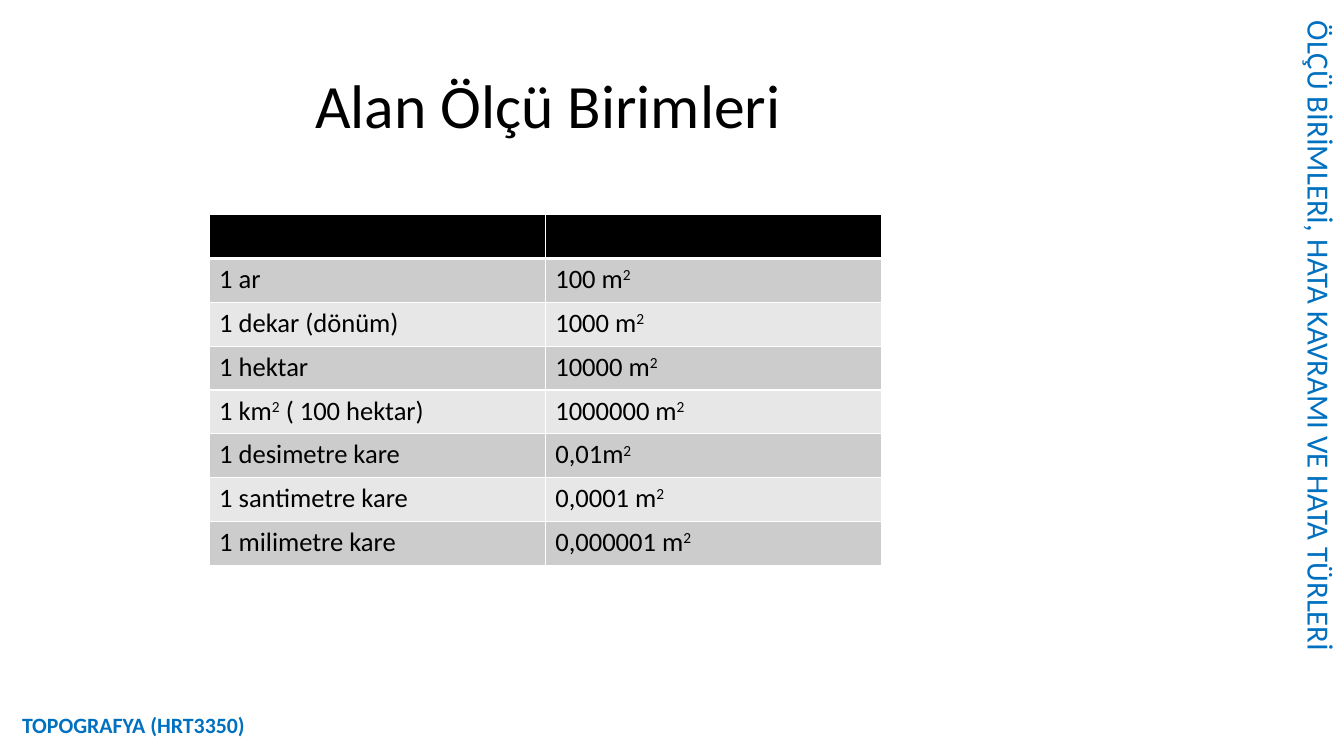
from typing import NamedTuple

from lxml import etree
from pptx import Presentation
from pptx import util as u
from pptx.dml.color import RGBColor
from pptx.enum import text
from pptx.oxml import ns

PX = u.Inches(1) // 200
FONT = "Calibri"
BLACK = RGBColor(0x00, 0x00, 0x00)
WHITE = RGBColor(0xFF, 0xFF, 0xFF)
BLUE = RGBColor(0x00, 0x70, 0xC0)
BANDS = (RGBColor(0xCC, 0xCC, 0xCC), RGBColor(0xE7, 0xE7, 0xE7))


class Box(NamedTuple):
    left: int
    top: int
    width: int
    height: int

    def emu(self) -> list[u.Emu]:
        return [u.Emu(v * PX) for v in self]


class Label(NamedTuple):
    box: Box
    words: str
    size: float
    bold: bool = False
    vertical: bool = False


class Unit(NamedTuple):
    """A table row; ^ stands before and after a superscript."""
    name: str
    area: str


LABELS = [
    Label(Box(2552, 22, 114, 1330),
          "ÖLÇÜ BİRİMLERİ, HATA KAVRAMI VE HATA TÜRLERİ", 22, vertical=True),
    Label(Box(24, 1402, 518, 84), "TOPOGRAFYA (HRT3350)", 15.6, bold=True),
]
UNITS = [
    Unit("1 ar", "100 m^2"),
    Unit("1 dekar (dönüm)", "1000 m^2"),
    Unit("1 hektar", "10000 m^2"),
    Unit("1 km^2^ ( 100 hektar)", "1000000 m^2"),
    Unit("1 desimetre kare", "0,01m^2"),
    Unit("1 santimetre kare", "0,0001 m^2"),
    Unit("1 milimetre kare", "0,000001 m^2"),
]
TITLE_BOX = Box(148, 134, 1880, 162)
TABLE_BOX = Box(415, 426, 1334, 696)


def add_run(p, words: str, size: float, color: RGBColor, bold: bool = False):
    r = p.add_run()
    r.text = words
    r.font.name = FONT
    r.font.size = u.Pt(size)
    r.font.bold = bold
    r.font.color.rgb = color
    return r


def add_title(slide, words: str) -> None:
    sp = slide.shapes.title
    sp.left, sp.top, sp.width, sp.height = TITLE_BOX.emu()
    tf = sp.text_frame
    tf.auto_size = text.MSO_AUTO_SIZE.NONE
    tf.vertical_anchor = text.MSO_ANCHOR.MIDDLE
    p = tf.paragraphs[0]
    p.alignment = text.PP_ALIGN.CENTER
    p.line_spacing = 0.9
    add_run(p, words, 44, BLACK)


def add_label(slide, label: Label) -> None:
    tf = slide.shapes.add_textbox(*label.box.emu()).text_frame
    tf.word_wrap = True
    if label.vertical:
        tf._txBody.bodyPr.set("vert", "vert")
    add_run(tf.paragraphs[0], label.words, label.size, BLUE, label.bold)


def style_cell(cell, fill: RGBColor, bottom: int = 1) -> None:
    """Draw white borders, widths in points, and fill the cell."""
    tc_pr = cell._tc.get_or_add_tcPr()
    for side, width in {"L": 1, "R": 1, "T": 1, "B": bottom}.items():
        ln = etree.SubElement(tc_pr, ns.qn(f"a:ln{side}"), w=str(u.Pt(width)))
        solid = etree.SubElement(ln, ns.qn("a:solidFill"))
        etree.SubElement(solid, ns.qn("a:srgbClr"), val=str(WHITE))
    cell.fill.solid()
    cell.fill.fore_color.rgb = fill


def add_unit_table(slide) -> None:
    row_count = len(UNITS) + 1
    table = slide.shapes.add_table(row_count, 2, *TABLE_BOX.emu()).table
    table.horz_banding = False
    for row in table.rows:
        row.height = u.Emu(TABLE_BOX.height * PX // row_count)
    for cell in table.rows[0].cells:
        style_cell(cell, BLACK, bottom=3)
    for i, unit in enumerate(UNITS):
        for cell, words in zip(table.rows[i + 1].cells, unit):
            style_cell(cell, BANDS[i % 2])
            p = cell.text_frame.paragraphs[0]
            for k, part in enumerate(words.split("^")):
                r = add_run(p, part, 19, BLACK)
                if k % 2:
                    r._r.get_or_add_rPr().set("baseline", "30000")


def main() -> None:
    prs = Presentation()
    prs.slide_width, prs.slide_height = u.Emu(2667 * PX), u.Emu(1500 * PX)
    slide = prs.slides.add_slide(prs.slide_layouts.get_by_name("Title Only"))
    add_title(slide, "Alan Ölçü Birimleri")
    add_unit_table(slide)
    for label in LABELS:
        add_label(slide, label)
    prs.save("out.pptx")


if __name__ == "__main__":
    main()
